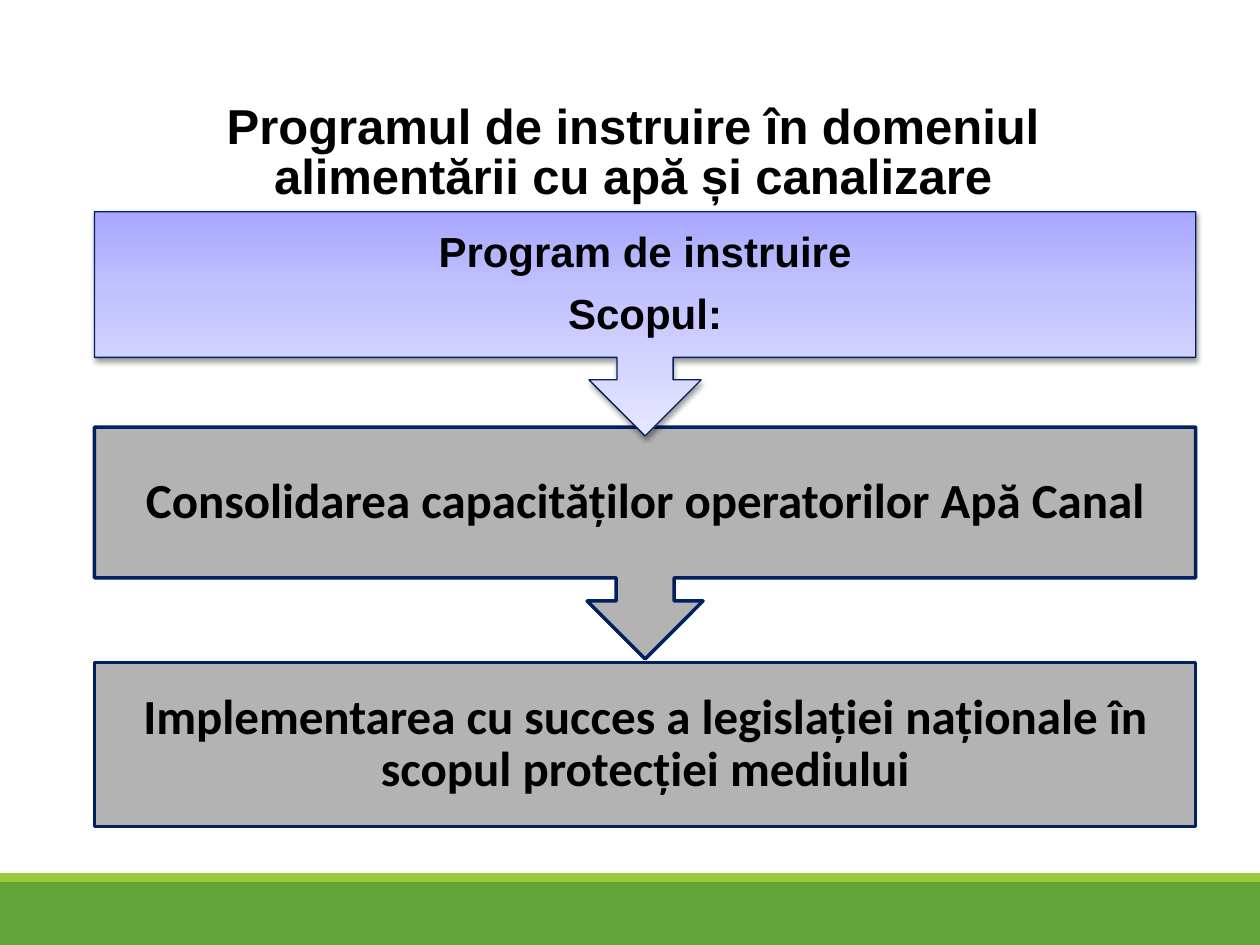
from lxml import etree
from pptx import Presentation
from pptx import util as u
from pptx.dml.color import RGBColor
from pptx.enum import shapes, text
from pptx.oxml import parse_xml
from pptx.oxml.ns import nsdecls, qn

COLORS = {"green": "63A537", "lime": "99CB38", "gray": "B3B3B3", "navy": "002060", "black": "000000"}
GRADIENT = [(0, "A7A7FF"), (35, "C1C1FF"), (100, "E7E7FF")]
TITLE = "Programul de instruire în domeniul alimentării cu apă și canalizare"
BANDS = [("green", 7, 0.5), ("lime", 6.93, 0.07)]
CALLOUT, BOX = shapes.MSO_SHAPE.DOWN_ARROW_CALLOUT, shapes.MSO_SHAPE.RECTANGLE
STEPS = [
    {"lines": ["Implementarea cu succes a legislației naționale în scopul protecției mediului"],
     "kind": BOX, "top": 5.26, "height": 1.3, "font": "Calibri", "size": 28, "inset": 0.22, "line": 2},
    {"lines": ["Consolidarea capacităților operatorilor Apă Canal"],
     "kind": CALLOUT, "top": 3.39, "height": 1.84, "font": "Calibri", "size": 28, "inset": 0.22, "line": 2},
    {"lines": ["Program de instruire", "Scopul:"], "shaded": True,
     "kind": CALLOUT, "top": 1.68, "height": 1.78, "font": "Arial", "size": 24, "inset": 0.19, "line": 0.75},
]


def color(name):
    return RGBColor.from_string(COLORS[name])


def assign(target, values):
    for name, value in values.items():
        setattr(target, name, value)


def place(item, left, top, width, height):
    assign(item, {"left": u.Inches(left), "top": u.Inches(top),
                  "width": u.Inches(width), "height": u.Inches(height)})


def write(frame, lines, font, size, spacing, anchor, insets):
    assign(frame, {"word_wrap": True, "auto_size": text.MSO_AUTO_SIZE.NONE, "vertical_anchor": anchor})
    assign(frame, {f"margin_{side}": u.Inches(inset)
                   for side, inset in zip(("left", "top", "right", "bottom"), insets)})
    for index, line in enumerate(lines):
        para = frame.paragraphs[0] if index == 0 else frame.add_paragraph()
        assign(para, {"alignment": text.PP_ALIGN.CENTER, "line_spacing": spacing,
                      "space_before": u.Pt(0),
                      "space_after": u.Pt(9.6 if index < len(lines) - 1 else 0)})
        span = para.add_run()
        span.text = line
        assign(span.font, {"name": font, "size": u.Pt(size), "bold": True})
        span.font.color.rgb = color("black")


def add_block(page, kind, left, top, width, height, fill):
    block = page.shapes.add_shape(kind, *map(u.Inches, (left, top, width, height)))
    block.shadow.inherit = False
    block.fill.solid()
    block.fill.fore_color.rgb = color(fill)
    return block


def shade(block):
    properties = block.fill._xPr
    stops = "".join(f'<a:gs pos="{pos * 1000}"><a:srgbClr val="{tone}"/></a:gs>' for pos, tone in GRADIENT)
    gradient = parse_xml(f'<a:gradFill {nsdecls("a")} rotWithShape="1"><a:gsLst>{stops}</a:gsLst>'
                         '<a:lin ang="5400000" scaled="0"/></a:gradFill>')
    properties.replace(properties.find(qn("a:solidFill")), gradient)
    shadow = etree.SubElement(properties.find(qn("a:effectLst")), qn("a:outerShdw"),
                              blurRad=str(u.Pt(3.1)), dist=str(u.Pt(1.6)), dir="5400000", rotWithShape="0")
    tone = etree.SubElement(shadow, qn("a:srgbClr"), val=COLORS["black"])
    etree.SubElement(tone, qn("a:alpha"), val="38000")


def main():
    """Build the training programme slide with its chain of goals."""
    deck = Presentation()
    assign(deck, {"slide_width": u.Inches(10), "slide_height": u.Inches(7.5)})
    page = deck.slides.add_slide(deck.slide_layouts[5])
    for fill, top, height in BANDS:
        add_block(page, BOX, 0, top, 10, height, fill).line.fill.background()
    for step in STEPS:
        block = add_block(page, step["kind"], 0.75, step["top"], 8.74, step["height"], "gray")
        block.line.color.rgb = color("navy")
        block.line.width = u.Pt(step["line"])
        if step.get("shaded"):
            shade(block)
        write(block.text_frame, step["lines"], step["font"], step["size"], 0.9,
              text.MSO_ANCHOR.MIDDLE, [step["inset"]] * 4)
    title = page.shapes.title
    place(title, 0.9, 0.31, 8.25, 1.36)
    write(title.text_frame, [TITLE], "Arial", 28, 0.85, text.MSO_ANCHOR.BOTTOM, (0.1, 0.05, 0.1, 0.05))
    deck.save("out.pptx")


if __name__ == "__main__":
    main()
